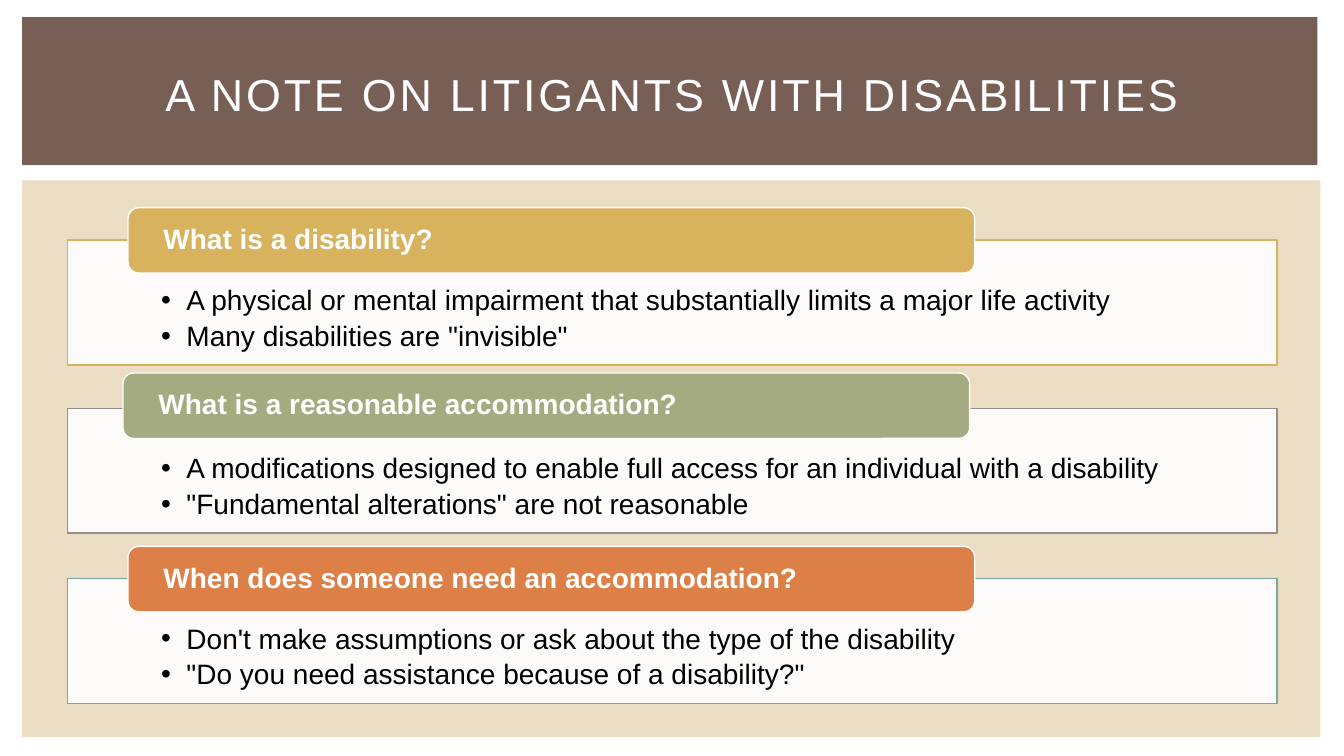
from lxml.etree import SubElement
from pptx import Presentation
from pptx.dml.color import RGBColor
from pptx.enum.shapes import MSO_SHAPE
from pptx.enum.text import MSO_ANCHOR, PP_ALIGN
from pptx.oxml.ns import qn
from pptx.util import Inches, Pt

CELL = Inches(0.1)
COLS, ROWS = 133.33, 75
FONT = "Arial"

TOPICS = [
    ("What is a disability?", "D8B25C", "D8B25C", 23.8, 12.7, 20.6, [
        "A physical or mental impairment that substantially limits a major life activity",
        'Many disabilities are "invisible"']),
    ("What is a reasonable accommodation?", "A5AB81", "968C8C", 40.5, 12.2, 37, [
        "A modifications designed to enable full access for an individual with a disability",
        '"Fundamental alterations" are not reasonable']),
    ("When does someone need an accommodation?", "DD8047", "7BA79D", 57.4, 12.7, 54.2, [
        "Don't make assumptions or ask about the type of the disability",
        '"Do you need assistance because of a disability?"']),
]


def grid(count):
    """Turn a count of grid cells into a length."""
    return int(count * CELL)


def color(code):
    """Turn a hex string into a colour."""
    return RGBColor.from_string(code)


def panel(slide, kind, area, fill, line=None, alpha=None):
    """Draw a filled shape on an area of columns and rows."""
    shape = slide.shapes.add_shape(kind, *map(grid, area))
    shape.shadow.inherit = False
    shape.fill.solid()
    shape.fill.fore_color.rgb = color(fill)
    if alpha:
        tint = shape.element.xpath("./p:spPr/a:solidFill/a:srgbClr")[0]
        SubElement(tint, qn("a:alpha"), val=str(alpha * 1000))
    if line:
        shape.line.color.rgb = color(line)
        shape.line.width = Pt(1)
    else:
        shape.line.fill.background()
    return shape


def bullet(para):
    """Give a paragraph a hanging round bullet."""
    props = para._p.get_or_add_pPr()
    props.set("marL", str(grid(2.5)))
    props.set("indent", str(grid(-2.5)))
    SubElement(props, qn("a:buFont"), typeface=FONT)
    SubElement(props, qn("a:buChar"), char="•")


def write(shape, lines, size=20, tone="FFFFFF", bold=False, align=PP_ALIGN.LEFT,
          anchor=MSO_ANCHOR.MIDDLE, inset=(1, 0.5, 1, 0.5), after=0,
          track=0, dots=False):
    """Write lines of formatted text into a shape."""
    frame = shape.text_frame
    frame.word_wrap = True
    frame.vertical_anchor = anchor
    (frame.margin_left, frame.margin_top,
     frame.margin_right, frame.margin_bottom) = map(grid, inset)
    for row, line in enumerate(lines):
        para = frame.add_paragraph() if row else frame.paragraphs[0]
        para.alignment = align
        para.line_spacing = 0.9
        para.space_before, para.space_after = Pt(0), Pt(after)
        if dots:
            bullet(para)
        run = para.add_run()
        run.text = line
        font = run.font
        font.name, font.size, font.bold = FONT, Pt(size), bold
        font.color.rgb = color(tone)
        if track:
            run._r.get_or_add_rPr().set("spc", str(track * 100))


def header(slide, text):
    """Place the title in front of its band."""
    panel(slide, MSO_SHAPE.RECTANGLE, (2.2, 1.7, 128.5, 14.7), "775F55")
    title = slide.shapes.title
    slide.shapes.element.append(title.element)
    title.left, title.top, title.width, title.height = map(grid, (5.6, 3.9, 122.2, 11.5))
    write(title, [text], size=32, align=PP_ALIGN.CENTER, track=2)


def topic(slide, name, fill, edge, top, left, tab, notes):
    """Draw a bulleted box with a heading tab."""
    box = panel(slide, MSO_SHAPE.RECTANGLE, (6.7, top, 120, 12.4), "FFFFFF", edge, 90)
    write(box, notes, tone="000000", anchor=MSO_ANCHOR.TOP,
          inset=(9.3, 4.6, 9.3, 1.6), after=4, dots=True)
    label = panel(slide, MSO_SHAPE.ROUNDED_RECTANGLE, (left, tab, 84, 6.5), fill, "FFFFFF")
    write(label, [name], bold=True, inset=(3.2, 0, 3.2, 0))


def main():
    """Build and save the slide."""
    deck = Presentation()
    deck.slide_width, deck.slide_height = grid(COLS), grid(ROWS)
    slide = deck.slides.add_slide(deck.slide_layouts.get_by_name("Title Only"))
    panel(slide, MSO_SHAPE.RECTANGLE, (2.2, 17.9, 128.8, 55.2), "EBDDC3")
    header(slide, "A NOTE ON LITIGANTS WITH DISABILITIES")
    for item in TOPICS:
        topic(slide, *item)
    deck.save("out.pptx")


if __name__ == "__main__":
    main()
